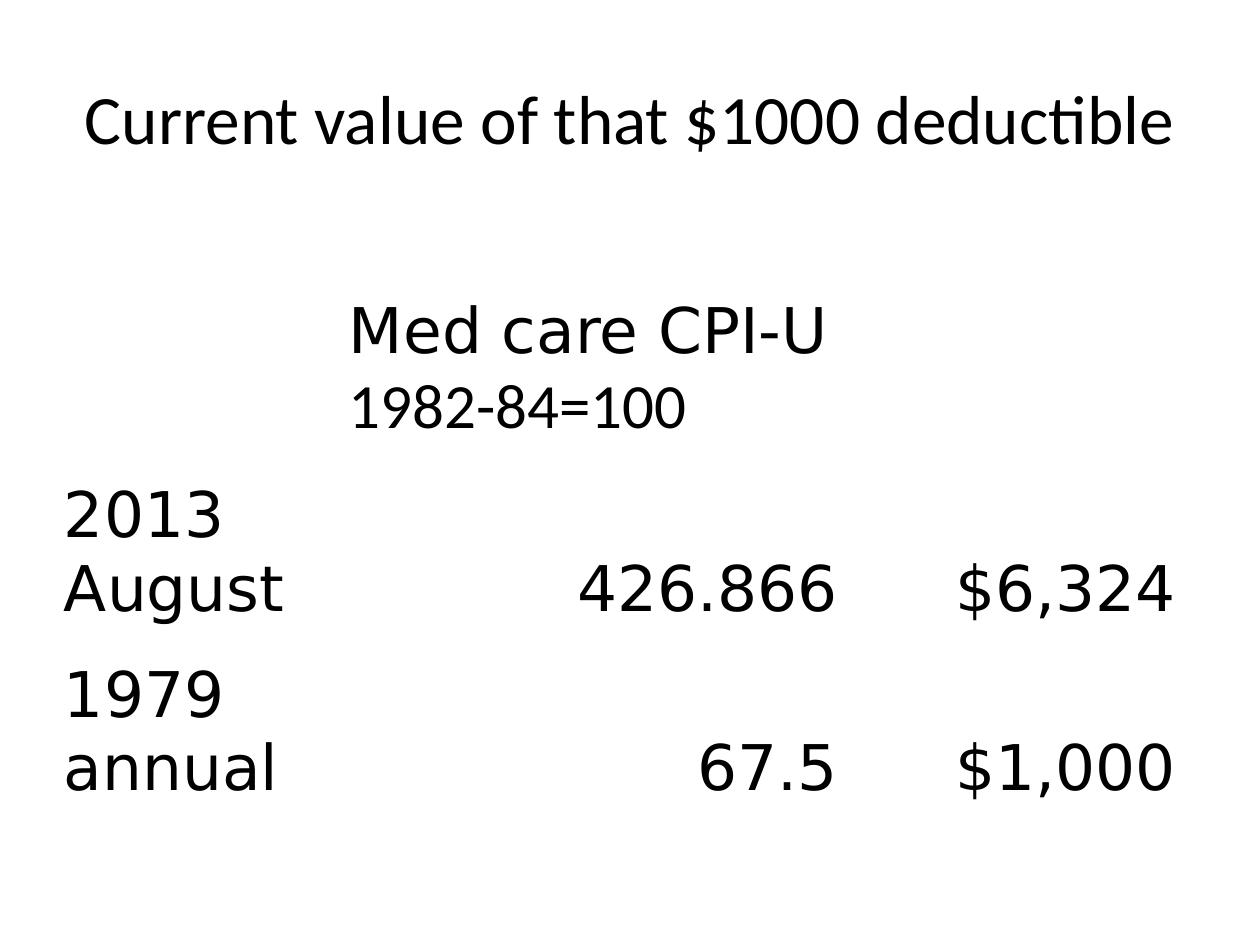
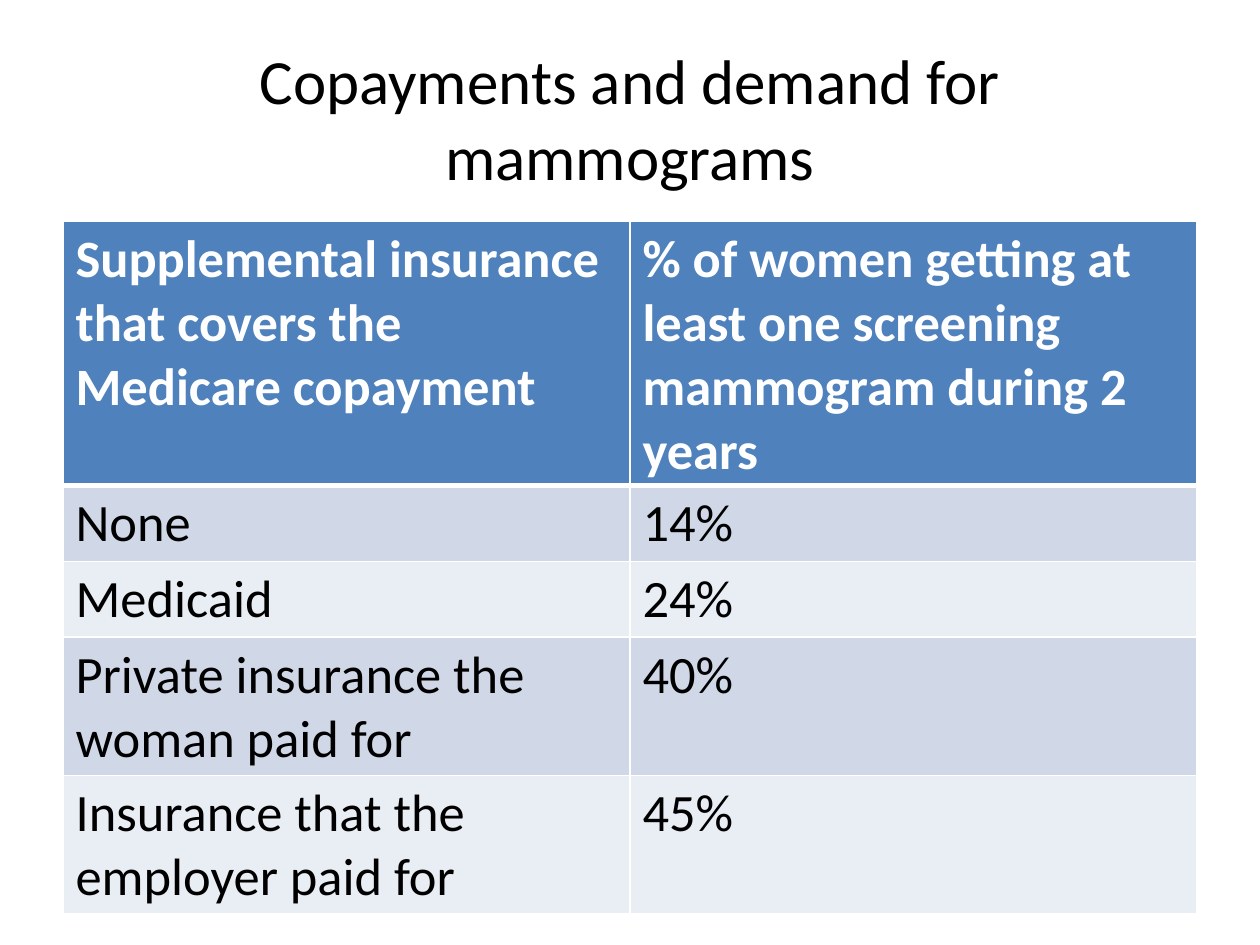
import pptx
import pptx.dml.color
import pptx.enum.text
import pptx.oxml
import pptx.oxml.ns
import pptx.util

ANCHOR = pptx.enum.text.MSO_ANCHOR
ALIGN = pptx.enum.text.PP_ALIGN
PX = 914400 / 126
NO_STYLE = "{2D5ABB26-0587-4C30-8999-92F81FD0307C}"


def px(length):
    return pptx.util.Emu(round(length * PX))


def color(value):
    return pptx.dml.color.RGBColor.from_string(value)


class SlideWriter:
    """Shared style plus the slide being written."""

    BODY, WIDE = "Calibri", "DejaVu Sans"
    BLACK, WHITE = "000000", "FFFFFF"
    HEADER, BANDS = "4F81BD", ("E9EDF4", "D0D8E8")
    LEFT, WIDTH = 63, 1134

    def __init__(self):
        self.deck = pptx.Presentation()
        self.deck.slide_width, self.deck.slide_height = px(1260), px(945)
        self.slide = None

    def new_slide(self):
        self.slide = self.deck.slides.add_slide(self.deck.slide_layouts[6])

    def format_text(self, para, size, font, ink=BLACK, bold=False, align=ALIGN.LEFT):
        para.alignment = align
        for span in para.runs:
            span.font.size = pptx.util.Pt(size)
            span.font.name = font
            span.font.bold = bold
            span.font.color.rgb = color(ink)

    def title(self, text, size):
        box = self.slide.shapes.add_textbox(px(self.LEFT), px(38), px(self.WIDTH), px(158))
        frame = box.text_frame
        frame.word_wrap = True
        frame.vertical_anchor = ANCHOR.MIDDLE
        frame.text = text
        self.format_text(frame.paragraphs[0], size, self.BODY, align=ALIGN.CENTER)

    def table(self, rows, widths, row_height, top, height):
        frame = self.slide.shapes.add_table(
            len(rows), len(widths), px(self.LEFT), px(top), px(self.WIDTH), px(height))
        table = frame.table
        table.first_row = table.horz_banding = False
        for style in frame.element.iter(pptx.oxml.ns.qn("a:tableStyleId")):
            style.text = NO_STYLE
        for column, width in zip(table.columns, widths):
            column.width = px(width)
        for row in table.rows:
            row.height = px(row_height)
        frame.height = px(height)
        for r, texts in enumerate(rows):
            for c, text in enumerate(texts):
                if text:
                    table.cell(r, c).text_frame.text = text
        return table

    def borders(self, cell, **points):
        properties = cell._tc.get_or_add_tcPr()
        for side in "LRTB":
            properties.append(pptx.oxml.parse_xml(
                f'<a:ln{side} {pptx.oxml.ns.nsdecls("a")} w="{points.get(side, 1) * 12700}">'
                f'<a:solidFill><a:srgbClr val="{self.WHITE}"/></a:solidFill></a:ln{side}>'))

    def plain_table(self, rows, widths, row_height, top):
        table = self.table(rows, widths, row_height, top, row_height * len(rows))
        table.cell(0, 1).merge(table.cell(0, 2))
        for r, texts in enumerate(rows):
            for c, text in enumerate(texts):
                if not text:
                    continue
                cell = table.cell(r, c)
                cell.vertical_anchor = ANCHOR.BOTTOM
                cell.margin_left = cell.margin_right = cell.margin_top = px(1)
                cell.margin_bottom = 0
                align = ALIGN.RIGHT if r and c else ALIGN.LEFT
                for para in cell.text_frame.paragraphs:
                    self.format_text(para, 36, self.WIDE, align=align)
        return table

    def banded_table(self, rows, widths, row_height, top, height):
        table = self.table(rows, widths, row_height, top, height)
        for r in range(len(rows)):
            for c in range(len(widths)):
                cell = table.cell(r, c)
                self.borders(cell, T=3 if r == 1 else 1, B=3 if r == 0 else 1)
                cell.fill.solid()
                cell.fill.fore_color.rgb = color(self.BANDS[r % 2] if r else self.HEADER)
                ink = self.BLACK if r else self.WHITE
                self.format_text(cell.text_frame.paragraphs[0], 30, self.BODY, ink, bold=r == 0)


def main():
    writer = SlideWriter()

    # Value of the deductible
    writer.new_slide()
    writer.title("Current value of that $1000 deductible", 39.6)
    price_index = writer.plain_table([
        ("", "Med care CPI-U\n1982-84=100", ""),
        ("2013\nAugust", "426.866", "$6,324 "),
        ("1979 annual", "67.5", "$1,000 "),
    ], (285, 491, 358), 180, 266)
    base_years = price_index.cell(0, 1).text_frame.paragraphs[1]
    writer.format_text(base_years, 36, writer.BODY)

    # Mammogram demand
    writer.new_slide()
    writer.title("Copayments and demand for mammograms", 36)
    writer.banded_table([
        ("Supplemental insurance that covers the Medicare copayment",
         "% of women getting at least one screening mammogram during 2 years"),
        ("None", "14%"),
        ("Medicaid", "24%"),
        ("Private insurance the woman paid for", "40%"),
        ("Insurance that the employer paid for", "45%"),
    ], (567, 567), 52, 221, 693)

    writer.deck.save("out.pptx")


if __name__ == "__main__":
    main()
